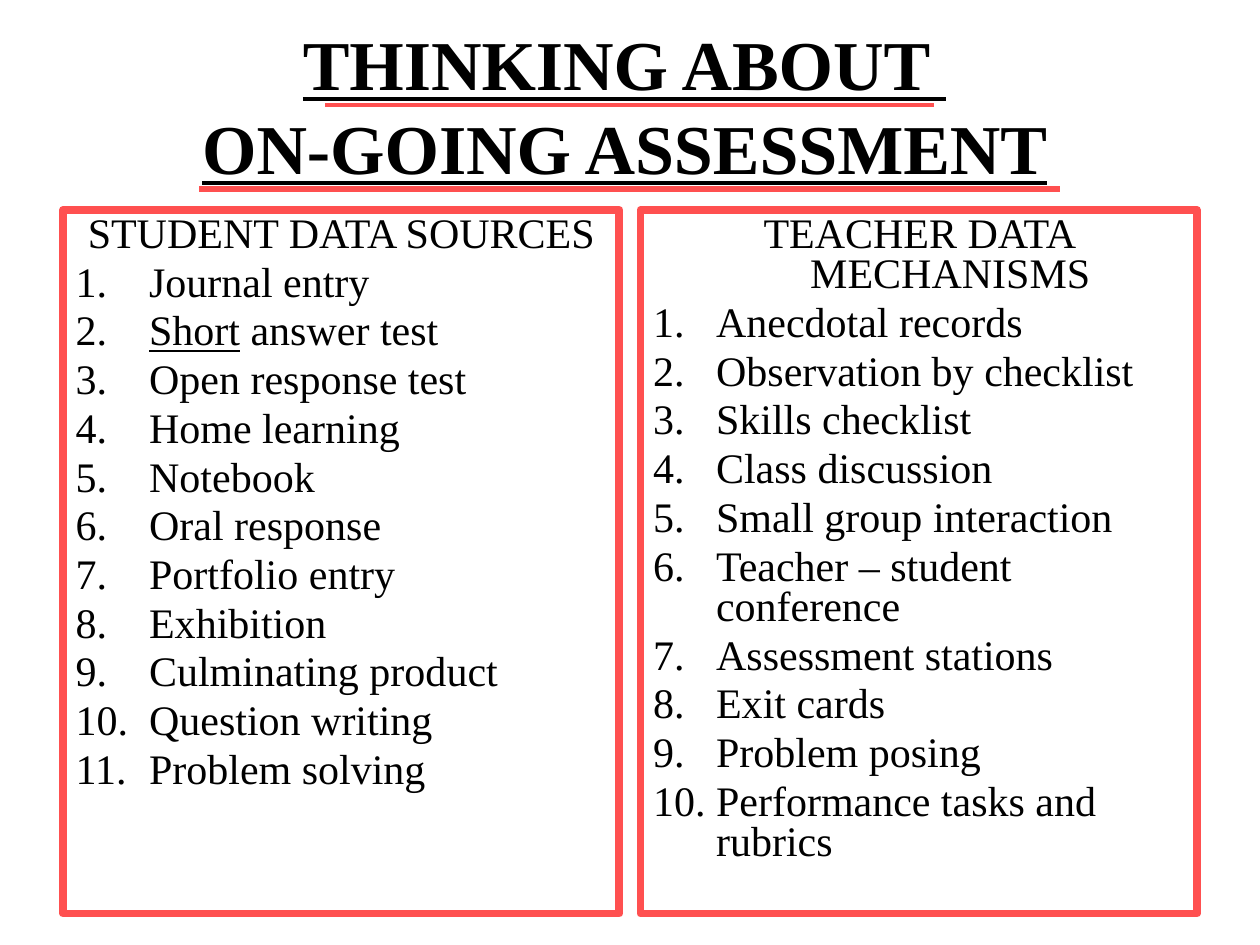
from dataclasses import dataclass
from lxml.etree import SubElement
from pptx import Presentation
from pptx.dml.color import RGBColor
from pptx.enum.shapes import MSO_CONNECTOR
from pptx.enum.text import MSO_ANCHOR, MSO_AUTO_SIZE, PP_ALIGN
from pptx.oxml.ns import qn
from pptx.util import Pt


@dataclass(frozen=True)
class Theme:
    font: str = "Times New Roman"
    ink: RGBColor = RGBColor(0, 0, 0)
    red: RGBColor = RGBColor(0xFF, 0x50, 0x50)
    head: int = 40
    body: int = 24
    frame: float = 4.5


class Page:
    def __init__(self, deck, theme):
        self.theme = theme
        self.slide = deck.slides.add_slide(deck.slide_layouts[3])

    def place(self, shape, box):
        shape.left, shape.top, shape.width, shape.height = map(Pt, box)
        shape.text_frame.auto_size = MSO_AUTO_SIZE.NONE
        shape.text_frame.word_wrap = True

    def style(self, para, size, **marks):
        for run in para.runs:
            font = run.font
            font.name, font.size = self.theme.font, Pt(size)
            font.color.rgb = self.theme.ink
            for key, value in marks.items():
                setattr(font, key, value)

    def title(self, text, box):
        shape = self.slide.shapes.title
        self.place(shape, box)
        frame = shape.text_frame
        frame.text = text
        frame.vertical_anchor = MSO_ANCHOR.MIDDLE
        para = frame.paragraphs[0]
        para.alignment = PP_ALIGN.CENTER
        self.style(para, self.theme.head, bold=True, underline=True)

    def panel(self, slot, head, items, box, indent):
        shape = self.slide.placeholders[slot]
        self.place(shape, box)
        shape.line.color.rgb = self.theme.red
        shape.line.width = Pt(self.theme.frame)
        frame = shape.text_frame
        frame.vertical_anchor = MSO_ANCHOR.TOP
        frame.text = "\n".join([head, *items])
        for i, para in enumerate(frame.paragraphs):
            para.alignment = PP_ALIGN.LEFT if i else PP_ALIGN.CENTER
            para.line_spacing = 0.8
            para.space_before = Pt(self.theme.body * 0.2)
            self.style(para, self.theme.body)
            self.number(para, indent, i > 0)
        return frame

    def number(self, para, indent, shown):
        props = para._p.get_or_add_pPr()
        props.set("marL", str(Pt(indent)))
        props.set("indent", str(-Pt(indent)))
        if shown:
            SubElement(props, qn("a:buFont"), typeface="+mj-lt")
            SubElement(props, qn("a:buAutoNum"), type="arabicPeriod")
        else:
            SubElement(props, qn("a:buNone"))

    def stress(self, para, word):
        rest = para.text.removeprefix(word)
        para.text = word
        para.add_run().text = rest
        self.style(para, self.theme.body)
        para.runs[0].font.underline = True

    def rule(self, left, right, top, width):
        line = self.slide.shapes.add_connector(
            MSO_CONNECTOR.STRAIGHT, Pt(left), Pt(top), Pt(right), Pt(top))
        line.line.color.rgb = self.theme.red
        line.line.width = Pt(width)
        SubElement(line._element.spPr, qn("a:effectLst"))


def main():
    deck = Presentation()
    deck.slide_width, deck.slide_height = Pt(720), Pt(540)
    page = Page(deck, Theme())
    page.title("THINKING ABOUT \vON-GOING ASSESSMENT", (84, 12, 546, 96))
    top, wide, high = 120, 318, 402
    left = page.panel(1, "STUDENT DATA SOURCES", [
        "Journal entry", "Short answer test", "Open response test",
        "Home learning", "Notebook", "Oral response", "Portfolio entry",
        "Exhibition", "Culminating product", "Question writing",
        "Problem solving",
    ], (36, top, wide, high), 42)
    page.stress(left.paragraphs[2], "Short")
    page.panel(2, "TEACHER DATA MECHANISMS", [
        "Anecdotal records", "Observation by checklist", "Skills checklist",
        "Class discussion", "Small group interaction",
        "Teacher – student conference", "Assessment stations", "Exit cards",
        "Problem posing", "Performance tasks and rubrics",
    ], (366, top, wide, high), 36)
    page.rule(186, 534, 60, 2.25)
    page.rule(114, 606, 108, 3)
    deck.save("out.pptx")


if __name__ == "__main__":
    main()
